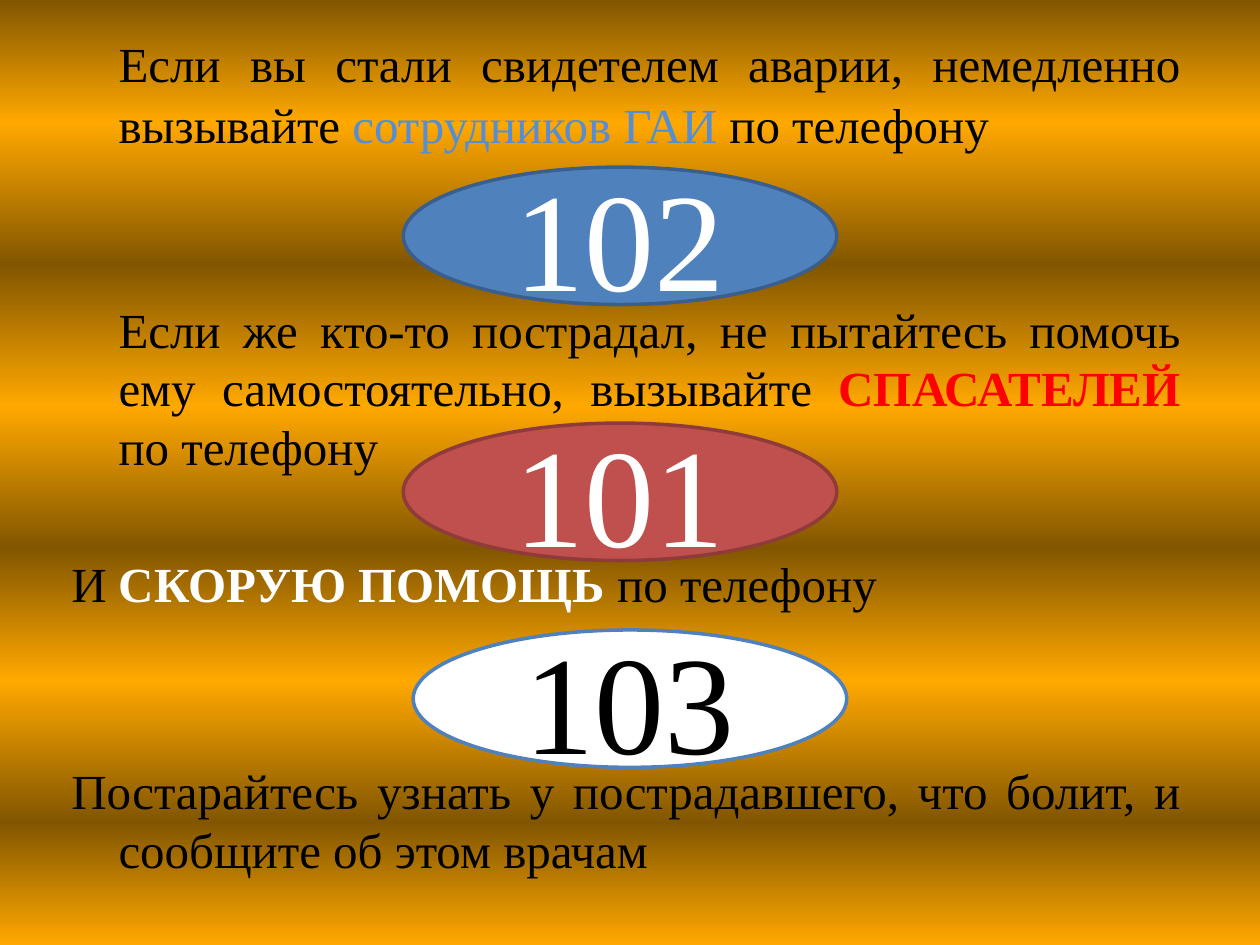
from lxml import etree
from pptx import Presentation
from pptx.dml.color import RGBColor
from pptx.enum.shapes import MSO_SHAPE as Shape
from pptx.enum.text import MSO_ANCHOR as Anchor, PP_ALIGN as Align
from pptx.oxml.ns import qn
from pptx.util import Cm, Pt

FONT = "Times New Roman"
BLACK, WHITE, RED, BLUE = "000000", "FFFFFF", "FF0000", "558ED5"
DARK, BRIGHT = "825600", "FFA800"
STOPS = [0, 13, 28, 43, 58, 72, 87, 100]
INDENT = 0.95

ADVICE = [
    dict(first=0, before=0, line=34.9, runs=[
        ("Если вы стали свидетелем аварии, немедленно вызывайте ", BLACK, False),
        ("сотрудников ГАИ ", BLUE, False),
        ("по телефону", BLACK, False)]),
    dict(first=0, before=83.7, line=33.4, runs=[
        ("Если же кто-то пострадал, не пытайтесь помочь ему самостоятельно, вызывайте ",
         BLACK, False),
        ("СПАСАТЕЛЕЙ", RED, True),
        (" по телефону", BLACK, False)]),
    dict(first=-INDENT, before=45.4, line=33.4, runs=[
        ("И ", BLACK, False),
        ("СКОРУЮ ПОМОЩЬ ", WHITE, True),
        ("по телефону", BLACK, False)]),
    dict(first=-INDENT, before=84.9, line=33.4, runs=[
        ("Постарайтесь узнать у пострадавшего, что болит, и сообщите об этом врачам",
         BLACK, False)]),
]
PHONES = [
    ("102", 8.13, 3.37, "4F81BD", "3A5F8C", WHITE),
    ("101", 8.13, 8.53, "C0504D", "8E3B39", WHITE),
    ("103", 8.33, 12.7, "FFFFFF", "4F81BD", BLACK),
]
PHONE_WIDTH, PHONE_HEIGHT = 8.74, 2.77


def rgb(color):
    """Turn a hex string into a colour."""
    return RGBColor.from_string(color)


def add_text(paragraph, text, size=28, color=BLACK, bold=False):
    """Append a formatted run to a paragraph."""
    run = paragraph.add_run()
    run.text = text
    run.font.name, run.font.size, run.font.bold = FONT, Pt(size), bold
    run.font.color.rgb = rgb(color)


def paint_background(slide):
    """Fill the slide with alternating dark and bright bands."""
    fill = slide.background.fill
    fill.gradient()
    fill.gradient_angle = 270
    stop_list = next(slide.background._cSld.iter(qn("a:gsLst")))
    for stop in list(stop_list):
        stop_list.remove(stop)
    for index, position in enumerate(STOPS):
        stop = etree.SubElement(stop_list, qn("a:gs"), pos=str(position * 1000))
        etree.SubElement(stop, qn("a:srgbClr"), val=BRIGHT if index % 2 else DARK)


def add_advice(slide):
    """Add the justified advice text."""
    frame = slide.shapes.add_textbox(Cm(1.19), Cm(0.5), Cm(22.86), Cm(18.5)).text_frame
    frame.word_wrap = True
    for index, advice in enumerate(ADVICE):
        paragraph = frame.add_paragraph() if index else frame.paragraphs[0]
        paragraph.alignment = Align.JUSTIFY
        paragraph.line_spacing = Pt(advice["line"])
        paragraph.space_before = Pt(advice["before"])
        properties = paragraph._p.get_or_add_pPr()
        properties.set("marL", str(Cm(INDENT)))
        properties.set("indent", str(Cm(advice["first"])))
        for text, color, bold in advice["runs"]:
            add_text(paragraph, text, color=color, bold=bold)


def add_phone(slide, number, left, top, fill, line, color):
    """Add an oval with a phone number."""
    oval = slide.shapes.add_shape(
        Shape.OVAL, Cm(left), Cm(top), Cm(PHONE_WIDTH), Cm(PHONE_HEIGHT))
    oval.shadow.inherit = False
    oval.fill.solid()
    oval.fill.fore_color.rgb = rgb(fill)
    oval.line.color.rgb = rgb(line)
    oval.line.width = Pt(2)
    oval.text_frame.vertical_anchor = Anchor.MIDDLE
    paragraph = oval.text_frame.paragraphs[0]
    paragraph.alignment = Align.CENTER
    add_text(paragraph, number, size=80, color=color)


def main():
    """Build and save the slide."""
    presentation = Presentation()
    presentation.slide_width, presentation.slide_height = Cm(25.4), Cm(19.05)
    slide = presentation.slides.add_slide(presentation.slide_layouts[6])
    paint_background(slide)
    add_advice(slide)
    for phone in PHONES:
        add_phone(slide, *phone)
    presentation.save("out.pptx")


if __name__ == "__main__":
    main()
